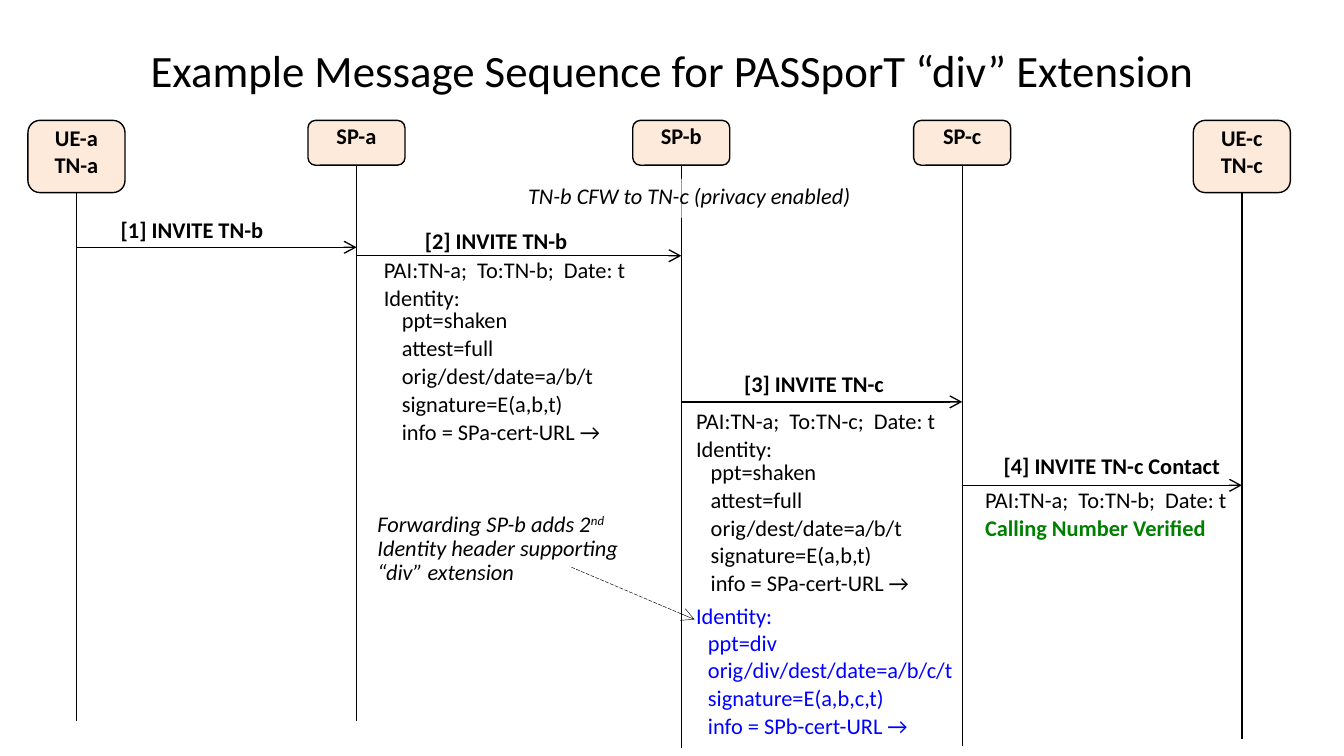
from lxml import etree
from pptx import Presentation
from pptx.dml.color import RGBColor
from pptx.enum.dml import MSO_LINE
from pptx.enum.shapes import MSO_CONNECTOR, MSO_SHAPE
from pptx.enum.text import MSO_ANCHOR, MSO_AUTO_SIZE, PP_ALIGN
from pptx.oxml.ns import qn
from pptx.util import Pt

BLACK, WHITE, PEACH, BLUE, GREEN = "000000", "FFFFFF", "FDEADA", "0000FF", "008000"
LIFELINES = {"UE-a": 41, "SP-a": 191, "SP-b": 365, "SP-c": 515.5, "UE-c": 665.3}
LABEL_INSETS = (7.2, 3.6)
DETAIL_INSETS = (7.2, 0.7)
SHAKEN_CLAIMS = ["ppt=shaken", "attest=full", "orig/dest/date=a/b/t",
                 "signature=E(a,b,t)", "info = SPa-cert-URL →"]


def color(hex_string):
    return RGBColor.from_string(hex_string)


def set_fill(shape, hex_string, opacity=100):
    shape.fill.solid()
    shape.fill.fore_color.rgb = color(hex_string)
    if opacity < 100:
        srgb = shape._element.spPr.find(f"{qn('a:solidFill')}/{qn('a:srgbClr')}")
        etree.SubElement(srgb, qn("a:alpha"), val=str(opacity * 1000))


def add_run(paragraph, text, hex_string=BLACK, superscript=False, **font_values):
    run = paragraph.add_run()
    run.text = text
    for name, value in {"name": "Calibri", "size": Pt(12), **font_values}.items():
        setattr(run.font, name, value)
    run.font.color.rgb = color(hex_string)
    if superscript:
        run._r.get_or_add_rPr().set("baseline", "30000")


def format_frame(frame, insets, **values):
    horizontal, vertical = insets
    margins = {"margin_left": Pt(horizontal), "margin_right": Pt(horizontal),
               "margin_top": Pt(vertical), "margin_bottom": Pt(vertical)}
    for name, value in {**margins, **values}.items():
        setattr(frame, name, value)


def add_text(slide, box, lines, insets=LABEL_INSETS, space=2, wrap=True):
    """Each line is a list of (text, format) runs."""
    shape = slide.shapes.add_textbox(*map(Pt, box))
    frame = shape.text_frame
    format_frame(frame, insets, word_wrap=wrap, auto_size=MSO_AUTO_SIZE.SHAPE_TO_FIT_TEXT)
    for index, runs in enumerate(lines):
        paragraph = frame.paragraphs[0] if index == 0 else frame.add_paragraph()
        paragraph.line_spacing = 0.9
        paragraph.space_before = Pt(space)
        for text, values in runs:
            add_run(paragraph, text, **values)
    return shape


def add_line(slide, start, end, width=0.75, arrow=False, dash=None):
    line = slide.shapes.add_connector(MSO_CONNECTOR.STRAIGHT, *map(Pt, (*start, *end)))
    line.line.color.rgb = color(BLACK)
    line.line.width = Pt(width)
    if dash:
        line.line.dash_style = dash
    if arrow:
        etree.SubElement(line.line._get_or_add_ln(), qn("a:tailEnd"), type="arrow")
    etree.SubElement(line._element.spPr, qn("a:effectLst"))


def add_title(slide, box, text):
    frame = slide.shapes.add_textbox(*map(Pt, box)).text_frame
    format_frame(frame, LABEL_INSETS, word_wrap=True, vertical_anchor=MSO_ANCHOR.MIDDLE)
    frame.paragraphs[0].alignment = PP_ALIGN.CENTER
    add_run(frame.paragraphs[0], text, size=Pt(24))


def add_participant(slide, box, names, lifeline_end):
    left, top, width, height = box
    shape = slide.shapes.add_shape(MSO_SHAPE.ROUNDED_RECTANGLE, *map(Pt, box))
    shape.shadow.inherit = False
    set_fill(shape, PEACH)
    shape.line.color.rgb = color(BLACK)
    shape.line.width = Pt(0.75)
    frame = shape.text_frame
    format_frame(frame, (0, 0), word_wrap=False, vertical_anchor=MSO_ANCHOR.TOP)
    for index, name in enumerate(names):
        paragraph = frame.paragraphs[0] if index == 0 else frame.add_paragraph()
        paragraph.alignment = PP_ALIGN.CENTER
        add_run(paragraph, name, bold=True)
    center = left + width / 2
    add_line(slide, (center, top + height), (center, lifeline_end))


def add_message(slide, sender, receiver, y, label_box, label):
    add_line(slide, (LIFELINES[sender], y), (LIFELINES[receiver], y), arrow=True)
    add_text(slide, label_box, [[(label, {"bold": True})]], space=6, wrap=False)


def add_details(slide, box, lines, hex_string=BLACK):
    runs = [[(line, {"hex_string": hex_string})] for line in lines]
    add_text(slide, box, runs, DETAIL_INSETS)


def add_forwarding_note(slide, box):
    left, top, width, height = box
    italic = {"italic": True}
    note = add_text(slide, box, [[
        ("Forwarding SP-b adds 2", italic),
        ("nd", {**italic, "superscript": True}),
        (" Identity header supporting “div” extension", italic),
    ]], space=6)
    set_fill(note, WHITE)
    add_line(slide, (left + 111, top + 32.5), (left + 177, top + 60.5),
             width=0.25, arrow=True, dash=MSO_LINE.LONG_DASH)


def main():
    presentation = Presentation()
    presentation.slide_width, presentation.slide_height = Pt(720), Pt(405)
    slide = presentation.slides.add_slide(presentation.slide_layouts[6])

    add_title(slide, (36, 3.6, 648, 67.7),
              "Example Message Sequence for PASSporT “div” Extension")

    # Participants and lifelines
    participants = [
        (["UE-a", "TN-a"], 386.5), (["SP-a"], 386.5), (["SP-b"], 401),
        (["SP-c"], 399.5), (["UE-c", "TN-c"], 396),
    ]
    for names, lifeline_end in participants:
        height = 38.7 if len(names) == 2 else 24
        box = (LIFELINES[names[0]] - 26, 64.5, 52, height)
        add_participant(slide, box, names, lifeline_end)

    # Call forwarding remark over the SP-b lifeline
    remark = add_text(slide, (275.8, 95.8, 190, 20.9),
                      [[("TN-b CFW to TN-c (privacy enabled)", {"italic": True})]],
                      space=6, wrap=False)
    set_fill(remark, WHITE, opacity=61)

    # Messages
    messages = [
        ("UE-a", "SP-a", 132.5, (57.6, 113.8, 91.5, 20.9), "[1] INVITE TN-b"),
        ("SP-a", "SP-b", 137, (220.5, 120, 91.5, 20.9), "[2] INVITE TN-b"),
        ("SP-b", "SP-c", 215.3, (391.5, 196.6, 90, 20.9), "[3] INVITE TN-c"),
        ("SP-c", "UE-c", 260, (530.6, 240.5, 131.8, 20.9), "[4] INVITE TN-c Contact"),
    ]
    for message in messages:
        add_message(slide, *message)

    # Header details of messages 2 and 3
    details = [
        ((198.5, 138.2, 156, 30.2), ["PAI:TN-a;  To:TN-b;  Date: t", "Identity:"], BLACK),
        ((208.2, 165, 139.7, 75), SHAKEN_CLAIMS, BLACK),
        ((365.8, 218.9, 150.5, 30.2), ["PAI:TN-a;  To:TN-c;  Date: t", "Identity:"], BLACK),
        ((373.7, 246.2, 139.7, 75), SHAKEN_CLAIMS, BLACK),
        ((365.8, 323.5, 150.5, 15), ["Identity:"], BLUE),
        ((372.2, 337.7, 145.4, 60), ["ppt=div", "orig/div/dest/date=a/b/c/t",
                                     "signature=E(a,b,c,t)", "info = SPb-cert-URL →"], BLUE),
    ]
    for detail in details:
        add_details(slide, *detail)

    # Result of message 4
    add_text(slide, (520.6, 258.5, 147.6, 36), [
        [("PAI:TN-a;  To:TN-b;  Date: t", {})],
        [("Calling Number Verified", {"hex_string": GREEN, "bold": True})],
    ], wrap=False)

    add_forwarding_note(slide, (195.1, 271.4, 162, 46.8))
    presentation.save("out.pptx")


if __name__ == "__main__":
    main()
